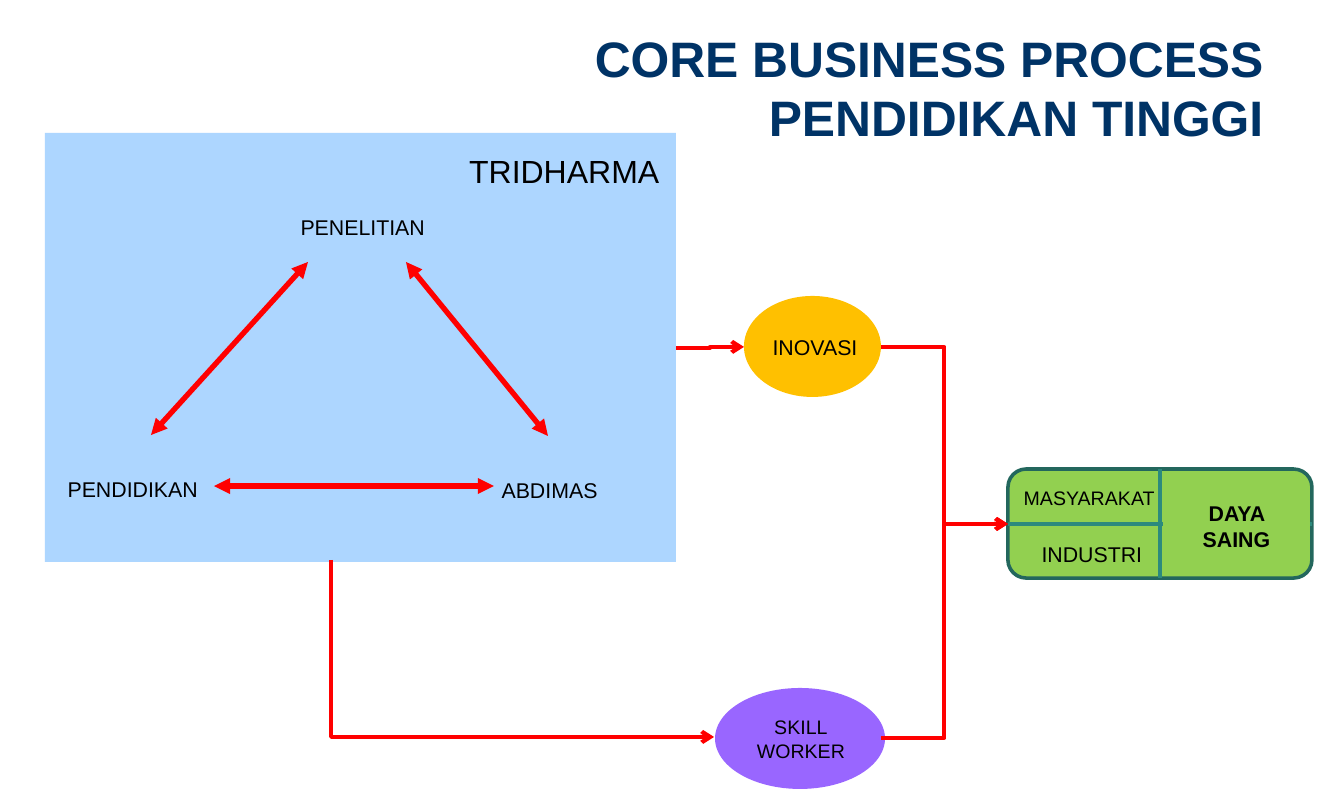
from lxml import etree
from pptx import Presentation
from pptx.dml.color import RGBColor
from pptx.enum.shapes import MSO_CONNECTOR, MSO_SHAPE
from pptx.enum.text import MSO_ANCHOR, MSO_AUTO_SIZE, PP_ALIGN
from pptx.oxml.ns import qn
from pptx.util import Pt

PX = 914400 // 128
STRAIGHT, ELBOW = MSO_CONNECTOR.STRAIGHT, MSO_CONNECTOR.ELBOW
RECT, ROUNDED, OVAL = MSO_SHAPE.RECTANGLE, MSO_SHAPE.ROUNDED_RECTANGLE, MSO_SHAPE.OVAL
LEFT, CENTER, RIGHT = PP_ALIGN.LEFT, PP_ALIGN.CENTER, PP_ALIGN.RIGHT
TOP, MIDDLE = MSO_ANCHOR.TOP, MSO_ANCHOR.MIDDLE

THEME = {
    "font": "Arial",
    "title": RGBColor.from_string("003366"),
    "text": RGBColor.from_string("000000"),
    "panel": RGBColor.from_string("ADD6FF"),
    "innovation": RGBColor.from_string("FFC000"),
    "worker": RGBColor.from_string("9966FF"),
    "outcome": RGBColor.from_string("92D050"),
    "border": RGBColor.from_string("23675D"),
    "divider": RGBColor.from_string("2C8A7D"),
    "flow": RGBColor.from_string("FF0000"),
    "title_size": 28,
    "heading_size": 18,
    "label_size": 12,
    "small_size": 11,
}


def write(frame, lines, size, color, align, anchor, wrap, bold=False):
    frame.auto_size = MSO_AUTO_SIZE.NONE
    frame.word_wrap = wrap
    frame.vertical_anchor = anchor
    for index, line in enumerate(lines):
        paragraph = frame.add_paragraph() if index else frame.paragraphs[0]
        paragraph.alignment = align
        run = paragraph.add_run()
        run.text = line
        run.font.name = THEME["font"]
        run.font.size = Pt(THEME[size])
        run.font.bold = bold
        run.font.color.rgb = THEME[color]


def link(kind, start, end, color, width, head=None, tail=None):
    connector = slide.shapes.add_connector(kind, *(v * PX for v in (*start, *end)))
    connector.line.color.rgb = THEME[color]
    connector.line.width = Pt(width)
    outline = connector.line._get_or_add_ln()
    for tag, arrow in (("a:headEnd", head), ("a:tailEnd", tail)):
        if arrow:
            etree.SubElement(outline, qn(tag), type=arrow)
    etree.SubElement(connector._element.spPr, qn("a:effectLst"))
    return connector


deck = Presentation()
deck.slide_width, deck.slide_height = 1344 * PX, 800 * PX
slide = deck.slides.add_slide(deck.slide_layouts[5])

title = slide.shapes.title
title.left, title.top, title.width, title.height = (v * PX for v in (362, 59, 914, 56))
write(title.text_frame, ["CORE BUSINESS PROCESS PENDIDIKAN TINGGI"],
      "title_size", "title", RIGHT, MIDDLE, True, True)

areas = [
    (ROUNDED, (1008, 469, 304, 109), "outcome"),
    (OVAL, (744, 296, 137, 101), "innovation"),
    (OVAL, (715, 688, 170, 101), "worker"),
    (RECT, (45, 133, 631, 429), "panel"),
]
for geometry, place, color in areas:
    area = slide.shapes.add_shape(geometry, *(v * PX for v in place))
    area.shadow.inherit = False
    area.fill.solid()
    area.fill.fore_color.rgb = THEME[color]
    if color == "outcome":
        area.line.color.rgb = THEME["border"]
        area.line.width = Pt(2)
    else:
        area.line.fill.background()

link(STRAIGHT, (1160, 469), (1160, 578), "divider", 2.25)
link(STRAIGHT, (1008, 524), (1312, 524), "divider", 2.25)

labels = [
    ((1029, 535, 128, 38), ["INDUSTRI"], "label_size", None, LEFT, TOP, False, False),
    ((1011, 480, 161, 36), ["MASYARAKAT"], "small_size", None, LEFT, TOP, False, False),
    ((760, 328, 111, 38), ["INOVASI"], "label_size", "innovation", LEFT, TOP, False, False),
    ((736, 709, 130, 60), ["SKILL", "WORKER"], "small_size", "worker", CENTER, TOP, True, False),
    ((489, 471, 124, 38), ["ABDIMAS"], "label_size", "panel", LEFT, TOP, False, False),
    ((288, 208, 151, 38), ["PENELITIAN"], "label_size", "panel", LEFT, TOP, False, False),
    ((55, 470, 157, 38), ["PENDIDIKAN"], "label_size", "panel", LEFT, TOP, False, False),
    ((438, 145, 234, 51), ["TRIDHARMA"], "heading_size", "panel", RIGHT, TOP, True, False),
    ((1163, 505, 147, 42), ["DAYA SAING"], "label_size", "outcome", CENTER, MIDDLE, True, True),
]
for place, lines, size, fill, align, anchor, wrap, bold in labels:
    label = slide.shapes.add_textbox(*(v * PX for v in place))
    if fill:
        label.fill.solid()
        label.fill.fore_color.rgb = THEME[fill]
    write(label.text_frame, lines, size, "text", align, anchor, wrap, bold)

for start, end in [((308, 262), (151, 435)), ((406, 262), (548, 436)), ((214, 486), (494, 486))]:
    link(STRAIGHT, start, end, "flow", 3, "triangle", "triangle")

for start, end in [((881, 738), (1008, 524)), ((881, 347), (1008, 524)), ((676, 348), (744, 347))]:
    link(ELBOW, start, end, "flow", 2.25, tail="arrow")

worker_flow = link(ELBOW, (611, 457), (434, 840), "flow", 2.25, tail="arrow")
worker_flow._element.spPr.find(qn("a:xfrm")).set("rot", "16200000")
worker_flow._element.spPr.find(qn("a:prstGeom")).set("prst", "bentConnector2")

deck.save("out.pptx")
